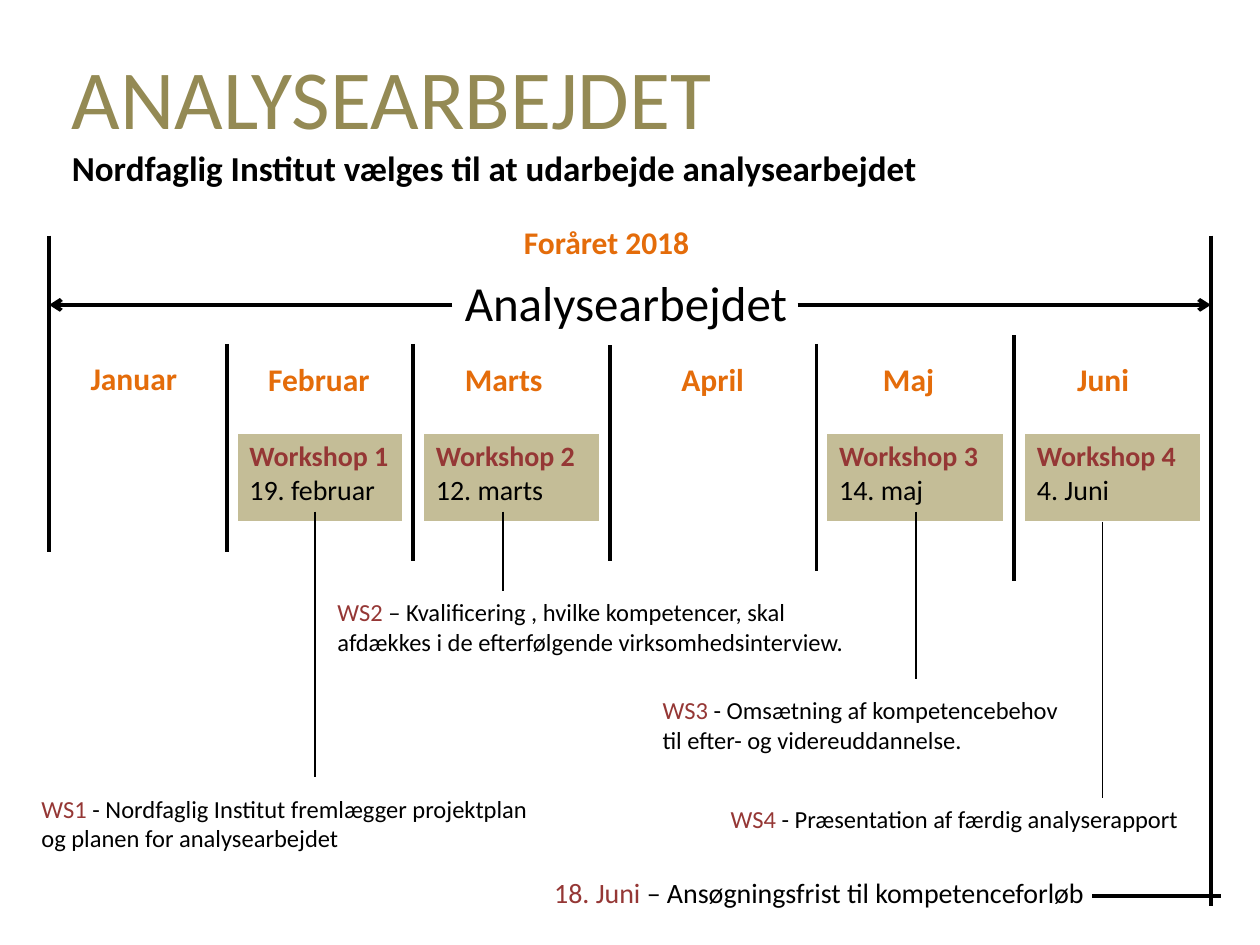
import pptx
import pptx.util
import pptx.dml.color
import pptx.enum.shapes
import pptx.enum.text
from dataclasses import dataclass
from pptx.util import Inches, Pt
from lxml import etree


@dataclass(frozen=True)
class Theme:
    font: str = "Calibri"
    black: str = "000000"
    olive: str = "948A54"
    sand: str = "C4BD97"
    orange: str = "E46C0A"
    red: str = "953735"
    title: int = 48
    subtitle: int = 20
    span: int = 28
    month: int = 18
    workshop: int = 16
    note: int = 14
    thick: float = 2.25
    thin: float = 1


THEME = Theme()

TITLE = "ANALYSEARBEJDET"
SUBTITLE = "Nordfaglig Institut\u00a0vælges til at udarbejde analysearbejdet"
PERIOD = "Foråret 2018"
SPAN = "Analysearbejdet"
DEADLINE = ("18. Juni ", "– Ansøgningsfrist til kompetenceforløb")

# Vertical rules that bound the months: x, top, bottom
RULES = [
    (0.39, 1.87, 4.38),
    (1.80, 2.73, 4.38),
    (3.28, 2.73, 4.45),
    (4.84, 2.74, 4.45),
    (6.48, 2.73, 4.53),
    (8.05, 2.66, 4.61),
    (9.61, 1.87, 7.19),
]

# Month name, left, top, width of its label
MONTHS = [
    ("Januar", 0.62, 2.80, 0.95),
    ("Februar", 2.03, 2.81, 1.07),
    ("Marts", 3.59, 2.81, 0.82),
    ("April", 5.31, 2.81, 0.76),
    ("Maj", 6.91, 2.81, 0.67),
    ("Juni", 8.45, 2.81, 0.62),
]

WORKSHOPS = [
    dict(month=1, name="Workshop 1", date="19. februar", stem=(2.50, 4.06, 6.17),
         code="WS1", note=[" - Nordfaglig Institut\u00a0fremlægger projektplan",
                           "og planen for analysearbejdet"],
         note_at=(0.23, 6.25, 4.38, 0.57)),
    dict(month=2, name="Workshop 2", date="12. marts", stem=(3.99, 4.06, 4.69),
         code="WS2", note=[" – Kvalificering , hvilke kompetencer, skal",
                           "afdækkes i de efterfølgende virksomhedsinterview."],
         note_at=(2.58, 4.69, 5.00, 0.57)),
    dict(month=4, name="Workshop 3", date="14. maj", stem=(7.27, 4.06, 5.39),
         code="WS3", note=[" - Omsætning af kompetencebehov",
                           "til efter- og videreuddannelse."],
         note_at=(5.16, 5.47, 3.52, 0.57)),
    dict(month=5, name="Workshop 4", date="4. Juni", stem=(8.75, 4.14, 6.33),
         code="WS4", note=[" - Præsentation af færdig analyserapport"],
         note_at=(5.70, 6.33, 3.83, 0.34)),
]

SPAN_Y = 2.42
CARD_TOP, CARD_HEIGHT, CARD_GAP = 3.44, 0.70, 0.08


def rgb(color):
    return pptx.dml.color.RGBColor.from_string(color)


def style(font, size, color, bold=False):
    font.name, font.size, font.bold = THEME.font, Pt(size), bold
    font.color.rgb = rgb(color)


def write(frame, lines, size, bold=False):
    """Fill a frame; each line is a list of (text, color) runs."""
    for index, runs in enumerate(lines):
        paragraph = frame.paragraphs[0] if index == 0 else frame.add_paragraph()
        style(paragraph.font, size, runs[0][1], bold)
        for text, color in runs:
            run = paragraph.add_run()
            run.text = text
            run.font.color.rgb = rgb(color)


def add_text(slide, at, lines, size, bold=False, wrap=True):
    frame = slide.shapes.add_textbox(*map(Inches, at)).text_frame
    frame.word_wrap = wrap
    write(frame, lines, size, bold)


def add_line(slide, start, end, width, arrow=False):
    line = slide.shapes.add_connector(
        pptx.enum.shapes.MSO_CONNECTOR.STRAIGHT, *map(Inches, (*start, *end)))
    line.line.color.rgb = rgb(THEME.black)
    line.line.width = Pt(width)
    namespace = pptx.oxml.ns.qn
    if arrow:
        etree.SubElement(line.line._get_or_add_ln(), namespace("a:tailEnd"), type="arrow")
    etree.SubElement(line._element.spPr, namespace("a:effectLst"))


def add_heading(slide):
    heading = slide.shapes.title
    heading.left, heading.top, heading.width, heading.height = map(
        Inches, (0.47, 0.31, 8.98, 1.25))
    frame = heading.text_frame
    frame.auto_size = pptx.enum.text.MSO_AUTO_SIZE.NONE
    frame.vertical_anchor = pptx.enum.text.MSO_ANCHOR.TOP
    write(frame, [[(TITLE, THEME.olive)], [(SUBTITLE, THEME.black)]], THEME.title)
    style(frame.paragraphs[1].font, THEME.subtitle, THEME.black, bold=True)
    for paragraph in frame.paragraphs:
        paragraph.alignment = pptx.enum.text.PP_ALIGN.LEFT


def add_timeline(slide):
    for x, top, bottom in RULES:
        add_line(slide, (x, top), (x, bottom), THEME.thick)
    for start, end in ((3.59, RULES[0][0]), (6.33, RULES[-1][0])):
        add_line(slide, (start, SPAN_Y), (end, SPAN_Y), THEME.thick, arrow=True)
    add_text(slide, (3.59, 2.11, 2.81, 0.57), [[(SPAN, THEME.black)]], THEME.span)
    add_text(slide, (4.06, 1.72, 1.56, 0.40), [[(PERIOD, THEME.orange)]],
             THEME.month, bold=True)
    for month, left, top, width in MONTHS:
        add_text(slide, (left, top, width, 0.40), [[(month, THEME.orange)]],
                 THEME.month, bold=True, wrap=False)


def add_workshop(slide, workshop):
    left, right = (RULES[workshop["month"] + step][0] for step in (0, 1))
    card = slide.shapes.add_table(1, 1, *map(Inches, (
        left + CARD_GAP, CARD_TOP, right - left - 2 * CARD_GAP, CARD_HEIGHT))).table
    card.horz_banding = False
    cell = card.cell(0, 0)
    cell.fill.solid()
    cell.fill.fore_color.rgb = rgb(THEME.sand)
    write(cell.text_frame, [[(workshop["name"], THEME.red)],
                            [(workshop["date"], THEME.black)]], THEME.workshop)
    for paragraph, bold in zip(cell.text_frame.paragraphs, (True, False)):
        paragraph.runs[0].font.bold = bold

    x, top, bottom = workshop["stem"]
    add_line(slide, (x, top), (x, bottom), THEME.thin)
    first, *rest = workshop["note"]
    lines = [[(workshop["code"], THEME.red), (first, THEME.black)]]
    lines += [[(text, THEME.black)] for text in rest]
    add_text(slide, workshop["note_at"], lines, THEME.note)


def add_deadline(slide):
    label, text = DEADLINE
    add_text(slide, (4.30, 6.90, 4.56, 0.37),
             [[(label, THEME.red), (text, THEME.black)]], THEME.workshop, wrap=False)
    add_line(slide, (8.67, 7.11), (9.69, 7.11), THEME.thick)


def main():
    deck = pptx.Presentation()
    deck.slide_width, deck.slide_height = Inches(10), Inches(7.5)
    slide = deck.slides.add_slide(deck.slide_layouts.get_by_name("Title Only"))
    add_heading(slide)
    add_timeline(slide)
    for workshop in WORKSHOPS:
        add_workshop(slide, workshop)
    add_deadline(slide)
    deck.save("out.pptx")


if __name__ == "__main__":
    main()
